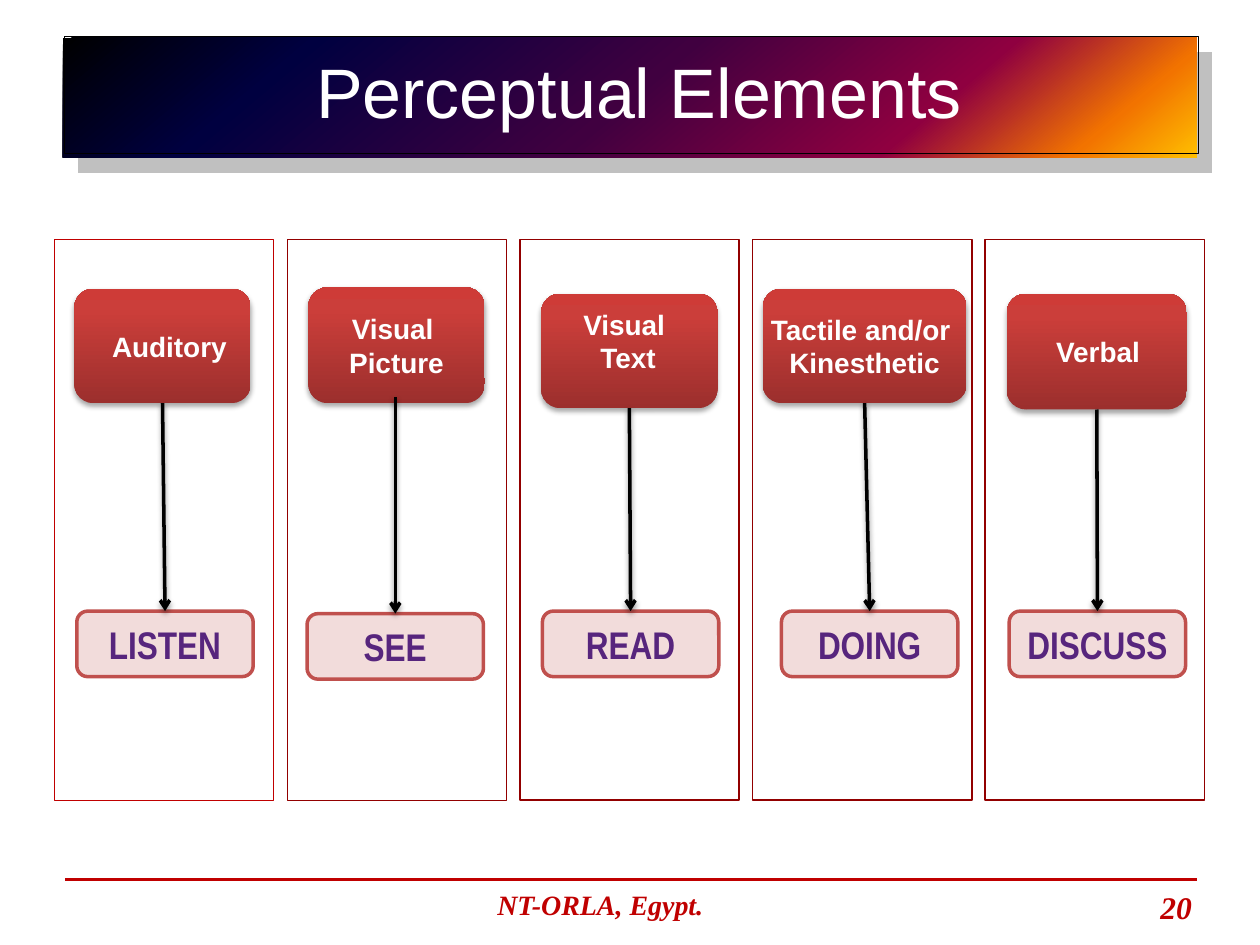
import pptx
import pptx.util
import pptx.oxml
import pptx.oxml.ns
import pptx.dml.color
import pptx.enum.shapes
import pptx.enum.text
from pptx.util import Inches

COLORS = {
    "white": "FFFFFF", "black": "000000", "red": "C00000", "maroon": "920000",
    "banner_shadow": "C0C0C0", "action_fill": "F2DCDB",
    "action_line": "C0504D", "action_text": "57257D",
}
BANNER_STOPS = [(0, "000000"), (20, "000040"), (50, "400040"),
                (75, "8F0040"), (90, "F27300"), (100, "FFBF00")]
CARD_STOPS = [(0, "9C2F2D"), (80, "CB3E3A"), (100, "CE3B37")]

SHAPES = pptx.enum.shapes.MSO_SHAPE
ANCHOR = pptx.enum.text.MSO_ANCHOR
ALIGN = pptx.enum.text.PP_ALIGN
NS = pptx.oxml.ns.nsdecls("a")

COLUMN_PITCH = 1.8475
COLUMNS = [
    dict(label="Auditory", action="LISTEN", frame=("red", 0.5),
         card=(0.16, 0.39, 1.4, 0.91), label_box=(0.33, 0.67, 1.17, 0.54),
         action_at=(0.18, 2.95)),
    dict(label="Visual \vPicture", action="SEE", frame=("maroon", 0.25),
         card=(0.17, 0.38, 1.4, 0.92), action_at=(0.16, 2.97),
         arrow_from=(0.86, 1.25)),
    dict(label="Visual \vText", action="READ", frame=("maroon", 1),
         card=(0.17, 0.43, 1.4, 0.91), label_box=(0.12, 0.49, 1.48, 0.56),
         action_at=(0.18, 2.95)),
    dict(label="Tactile and/or \vKinesthetic", action="DOING",
         frame=("maroon", 1), card=(0.08, 0.39, 1.62, 0.91),
         action_at=(0.23, 2.95)),
    dict(label="Verbal", action="DISCUSS", frame=("maroon", 1),
         card=(0.17, 0.43, 1.43, 0.92), label_box=(0.28, 0.71, 1.23, 0.37),
         action_at=(0.19, 2.95)),
]


def rgb(name):
    return pptx.dml.color.RGBColor.from_string(COLORS[name])


def add_box(slide, kind, left, top, width, height, fill=None, line=None):
    box = slide.shapes.add_shape(kind, Inches(left), Inches(top),
                                 Inches(width), Inches(height))
    box.shadow.inherit = False
    if fill:
        box.fill.solid()
        box.fill.fore_color.rgb = rgb(fill)
    else:
        box.fill.background()
    if line:
        box.line.color.rgb = rgb(line[0])
        box.line.width = pptx.util.Pt(line[1])
    else:
        box.line.fill.background()
    return box


def set_gradient(shape, stops, angle):
    shape.fill.gradient()
    properties = shape._element.spPr
    old = properties.find(pptx.oxml.ns.qn("a:gradFill"))
    stop_xml = "".join(
        f'<a:gs pos="{pos * 1000}"><a:srgbClr val="{color}"/></a:gs>'
        for pos, color in stops)
    properties.replace(old, pptx.oxml.parse_xml(
        f'<a:gradFill {NS} rotWithShape="1"><a:gsLst>{stop_xml}</a:gsLst>'
        f'<a:lin ang="{angle * 60000}" scaled="0"/></a:gradFill>'))


def set_effects(shape, shadow=None):
    properties = shape._element.spPr
    old = properties.find(pptx.oxml.ns.qn("a:effectLst"))
    if old is not None:
        properties.remove(old)
    shadow_xml = ""
    if shadow:
        color, opacity, blur, distance, angle = shadow
        shadow_xml = (
            f'<a:outerShdw blurRad="{pptx.util.Pt(blur)}" '
            f'dist="{pptx.util.Pt(distance)}" dir="{angle * 60000}" '
            f'algn="ctr" rotWithShape="0"><a:srgbClr val="{COLORS[color]}">'
            f'<a:alpha val="{opacity * 1000}"/></a:srgbClr></a:outerShdw>')
    properties.append(pptx.oxml.parse_xml(
        f"<a:effectLst {NS}>{shadow_xml}</a:effectLst>"))


def add_line(slide, start, end, color, width):
    line = slide.shapes.add_connector(
        pptx.enum.shapes.MSO_CONNECTOR.STRAIGHT,
        Inches(start[0]), Inches(start[1]), Inches(end[0]), Inches(end[1]))
    line.line.color.rgb = rgb(color)
    line.line.width = pptx.util.Pt(width)
    return line


def write(shape, text, size, font, color, bold=False, italic=False,
          align=ALIGN.CENTER, anchor=ANCHOR.MIDDLE, wrap=True, inset=None):
    frame = shape.text_frame
    frame.word_wrap = wrap
    frame.vertical_anchor = anchor
    if inset is not None:
        frame.margin_left = frame.margin_right = Inches(inset)
        frame.margin_top = frame.margin_bottom = Inches(inset)
    paragraph = frame.paragraphs[0]
    paragraph.text = text
    paragraph.alignment = align
    paragraph.font.size = pptx.util.Pt(size)
    paragraph.font.name = font
    paragraph.font.bold = bold
    paragraph.font.italic = italic
    paragraph.font.color.rgb = rgb(color)
    return paragraph


def add_text(slide, left, top, width, height, *args, **options):
    box = slide.shapes.add_textbox(Inches(left), Inches(top),
                                   Inches(width), Inches(height))
    return write(box, *args, anchor=ANCHOR.TOP, **options)


def add_banner(slide, left, top, width, height):
    banner = add_box(slide, SHAPES.RECTANGLE, left, top, width, height)
    set_gradient(banner, BANNER_STOPS, 50)
    set_effects(banner, ("banner_shadow", 100, 0, 12.2, 45))
    title = add_box(slide, SHAPES.RECTANGLE, left + 0.01, top - 0.01,
                    width, height - 0.02, line=("black", 0.5))
    heading = write(title, "Perceptual Elements", 40, "Arial", "white",
                    wrap=False, inset=0)
    heading.line_spacing = 0.93
    heading.space_after = pptx.util.Pt(14.2)
    heading._p.get_or_add_pPr().set("marL", str(Inches(0.12)))


def add_column(slide, left, top, width, height, column):
    add_box(slide, SHAPES.RECTANGLE, left, top, width, height,
            line=column["frame"])

    x, y, card_width, card_height = column["card"]
    card = add_box(slide, SHAPES.ROUNDED_RECTANGLE, left + x, top + y,
                   card_width, card_height)
    set_gradient(card, CARD_STOPS, 270)
    set_effects(card, ("black", 35, 3.1, 1.8, 90))
    label_style = (column["label"], 16, "Arial", "white", True)
    if "label_box" in column:
        x, y, label_width, label_height = column["label_box"]
        add_text(slide, left + x, top + y, label_width, label_height,
                 *label_style)
    else:
        write(card, *label_style, wrap=False)

    x, y = column["action_at"]
    action = add_box(slide, SHAPES.FLOWCHART_ALTERNATE_PROCESS,
                     left + x, top + y, 1.4, 0.52,
                     fill="action_fill", line=("action_line", 2))
    write(action, column["action"], 22, "Arial Narrow", "action_text", True)

    x, y = column.get("arrow_from", (0, 0))
    arrow = add_line(slide, (left + x, top + y), (left + x, top + height),
                     "black", 2)
    if "arrow_from" not in column:
        arrow.begin_connect(card, 2)
    arrow.end_connect(action, 0)
    arrow.line._get_or_add_ln().append(
        pptx.oxml.parse_xml(f'<a:tailEnd {NS} type="arrow"/>'))
    set_effects(arrow, ("black", 38, 3.1, 1.6, 90))


def add_footer(slide, left, top, width):
    rule = add_line(slide, (left, top), (left + width, top), "red", 2.25)
    set_effects(rule)
    style = ("Times New Roman", "red", True, True)
    venue = add_text(slide, left + 2.43, top + 0.08, 3.63, 0.37,
                     "NT-ORLA, Egypt.", 16, *style, inset=0)
    number = add_text(slide, left + 6.61, top + 0.09, 2.33, 0.37,
                      "20", 18, *style, align=ALIGN.RIGHT, inset=0)
    venue.line_spacing = number.line_spacing = 0.95


def main():
    deck = pptx.Presentation()
    deck.slide_width, deck.slide_height = Inches(10), Inches(7.5)
    slide = deck.slides.add_slide(deck.slide_layouts[6])
    add_banner(slide, 0.5, 0.3, 9, 0.95)
    add_footer(slide, 0.52, 6.98, 8.98)
    for index, column in enumerate(COLUMNS):
        add_column(slide, 0.43 + index * COLUMN_PITCH, 1.9, 1.74, 4.45, column)
    deck.save("out.pptx")


if __name__ == "__main__":
    main()
